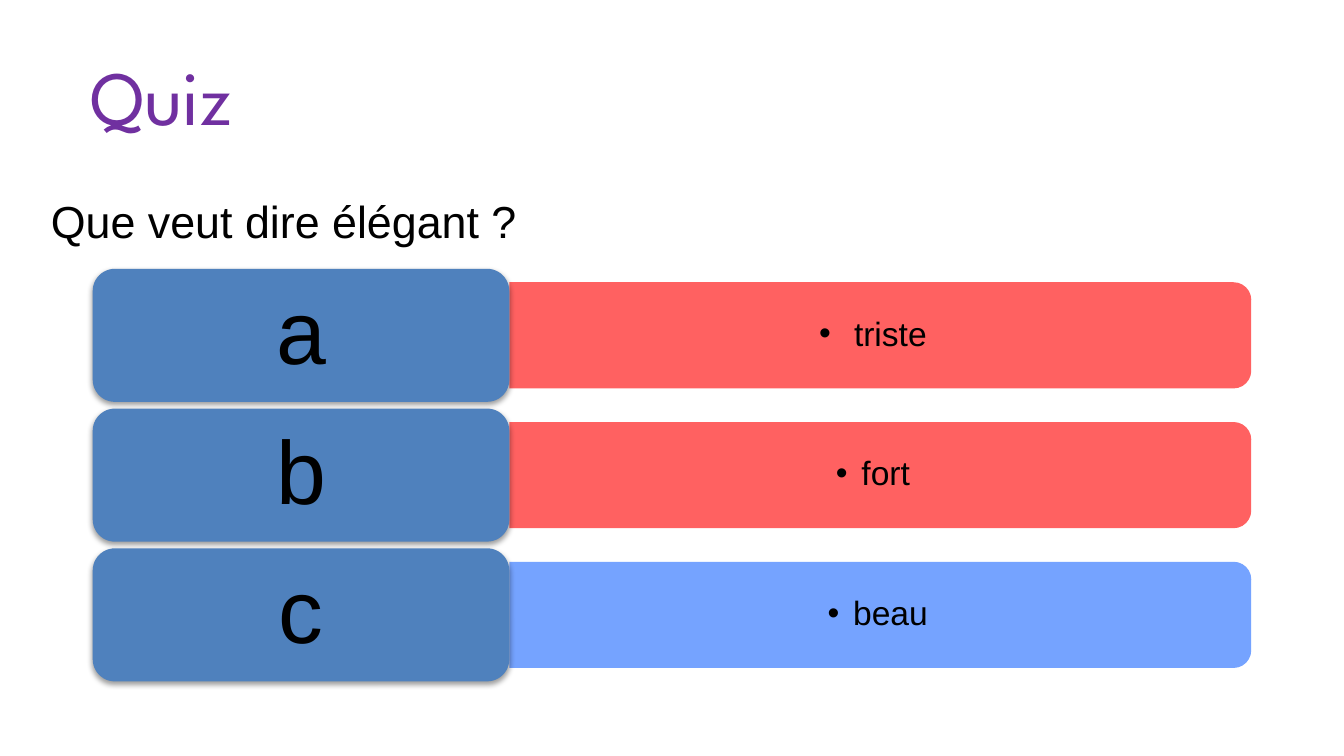
from lxml import etree
from pptx import Presentation
from pptx import util as u
from pptx.dml.color import RGBColor
from pptx.enum import shapes, text
from pptx.oxml.ns import qn

TITLE = "Quiz"
QUESTION = "Que veut dire élégant ?"
ANSWERS = [
    ("a", [(" ", True), ("triste ", False)], "wrong"),
    ("b", [("fort ", False)], "wrong"),
    ("c", [("beau", False)], "right"),
]
COLORS = {"title": "7030A0", "ink": "000000", "letter": "4F81BD",
          "wrong": "FF5050", "right": "6699FF"}

SLIDE_W = 10
SLIDE_H = SLIDE_W * 9 / 16
LEFT, TOP, STEP = 0.69, 2.0, 1.04
LETTER_W, LETTER_H, LETTER_PAD = 3.1, 0.99, 0.05
BAR_W, BAR_H, BAR_TEXT_W, BAR_TEXT_H = 5.52, 0.79, 5.48, 0.71

LETTER_FORMAT = {"alignment": text.PP_ALIGN.CENTER, "line_spacing": 0.9,
                 "space_after": u.Pt(16.8)}
ANSWER_FORMAT = {"alignment": text.PP_ALIGN.CENTER, "line_spacing": 0.9,
                 "space_after": u.Pt(2.7), "level": 1}


def set_all(target, values):
    for name, value in values.items():
        setattr(target, name, value)


def inches(*lengths):
    return [u.Inches(length) for length in lengths]


def write(shape, runs, size, color="ink", font="Arial", inset=(0, 0),
          anchor=text.MSO_ANCHOR.MIDDLE, fit=text.MSO_AUTO_SIZE.NONE, layout=None):
    frame = shape.text_frame
    across, down = inches(*inset)
    set_all(frame, {"word_wrap": True, "auto_size": fit, "vertical_anchor": anchor,
                    "margin_left": across, "margin_right": across,
                    "margin_top": down, "margin_bottom": down})
    paragraph = frame.paragraphs[0]
    set_all(paragraph, layout or {"alignment": text.PP_ALIGN.LEFT})
    for words, bold in runs:
        run = paragraph.add_run()
        run.text = words
        set_all(run.font, {"name": font, "size": u.Pt(size), "bold": bold})
        run.font.color.rgb = RGBColor.from_string(COLORS[color])
    return paragraph


def add_block(slide, kind, box, color):
    block = slide.shapes.add_shape(kind, *inches(*box))
    block.shadow.inherit = False
    block.fill.solid()
    block.fill.fore_color.rgb = RGBColor.from_string(COLORS[color])
    block.line.fill.background()
    return block


def add_alpha(color_element, percent):
    etree.SubElement(color_element, qn("a:alpha"), val=str(percent * 1000))


def add_shadow(block):
    effects = block._element.spPr.find(qn("a:effectLst"))
    shadow = etree.SubElement(effects, qn("a:outerShdw"), blurRad=str(u.Pt(3.1)),
                              dist=str(u.Pt(1.6)), dir="5400000", rotWithShape="0")
    add_alpha(etree.SubElement(shadow, qn("a:srgbClr"), val=COLORS["ink"]), 38)


def add_bullet(paragraph):
    props = paragraph._p.get_or_add_pPr()
    indent = u.Inches(0.19)
    props.set("marL", str(indent))
    props.set("indent", str(-indent))
    etree.SubElement(props, qn("a:buFont"), typeface="Arial")
    etree.SubElement(props, qn("a:buChar"), char="•")


def add_answer(slide, row, letter, runs, verdict):
    top = TOP + row * STEP
    middle = top + LETTER_H / 2
    bar_left = LEFT + LETTER_W
    bar = add_block(slide, shapes.MSO_SHAPE.ROUND_2_SAME_RECTANGLE,
                    (bar_left + (BAR_W - BAR_H) / 2, middle - BAR_W / 2, BAR_H, BAR_W),
                    verdict)
    bar.rotation = 90
    add_alpha(bar._element.spPr.find(qn("a:solidFill"))[0], 90)
    answer = slide.shapes.add_textbox(
        *inches(bar_left, middle - BAR_TEXT_H / 2, BAR_TEXT_W, BAR_TEXT_H))
    add_bullet(write(answer, runs, 18, inset=(0.27, 0.14), layout=ANSWER_FORMAT))

    card = add_block(slide, shapes.MSO_SHAPE.ROUNDED_RECTANGLE,
                     (LEFT, top, LETTER_W, LETTER_H), "letter")
    add_shadow(card)
    label = slide.shapes.add_textbox(
        *inches(LEFT + LETTER_PAD, top + LETTER_PAD,
                LETTER_W - 2 * LETTER_PAD, LETTER_H - 2 * LETTER_PAD))
    write(label, [(letter, False)], 48, inset=(0.2, 0.1), layout=LETTER_FORMAT)


def main():
    deck = Presentation()
    set_all(deck, {"slide_width": u.Inches(SLIDE_W), "slide_height": u.Inches(SLIDE_H)})
    slide = deck.slides.add_slide(deck.slide_layouts[5])

    title = slide.shapes.title
    set_all(title, dict(zip(("left", "top", "width", "height"),
                            inches(0.67, 0.16, 8.62, 1.09))))
    write(title, [(TITLE, False)], 41, "title", "League Spartan")

    for row, answer in enumerate(ANSWERS):
        add_answer(slide, row, *answer)

    question = slide.shapes.add_textbox(*inches(0.28, 1.39, 8.98, 0.5))
    write(question, [(QUESTION, False)], 24, inset=(0.1, 0.05),
          anchor=text.MSO_ANCHOR.TOP, fit=text.MSO_AUTO_SIZE.SHAPE_TO_FIT_TEXT)
    deck.save("out.pptx")


if __name__ == "__main__":
    main()
